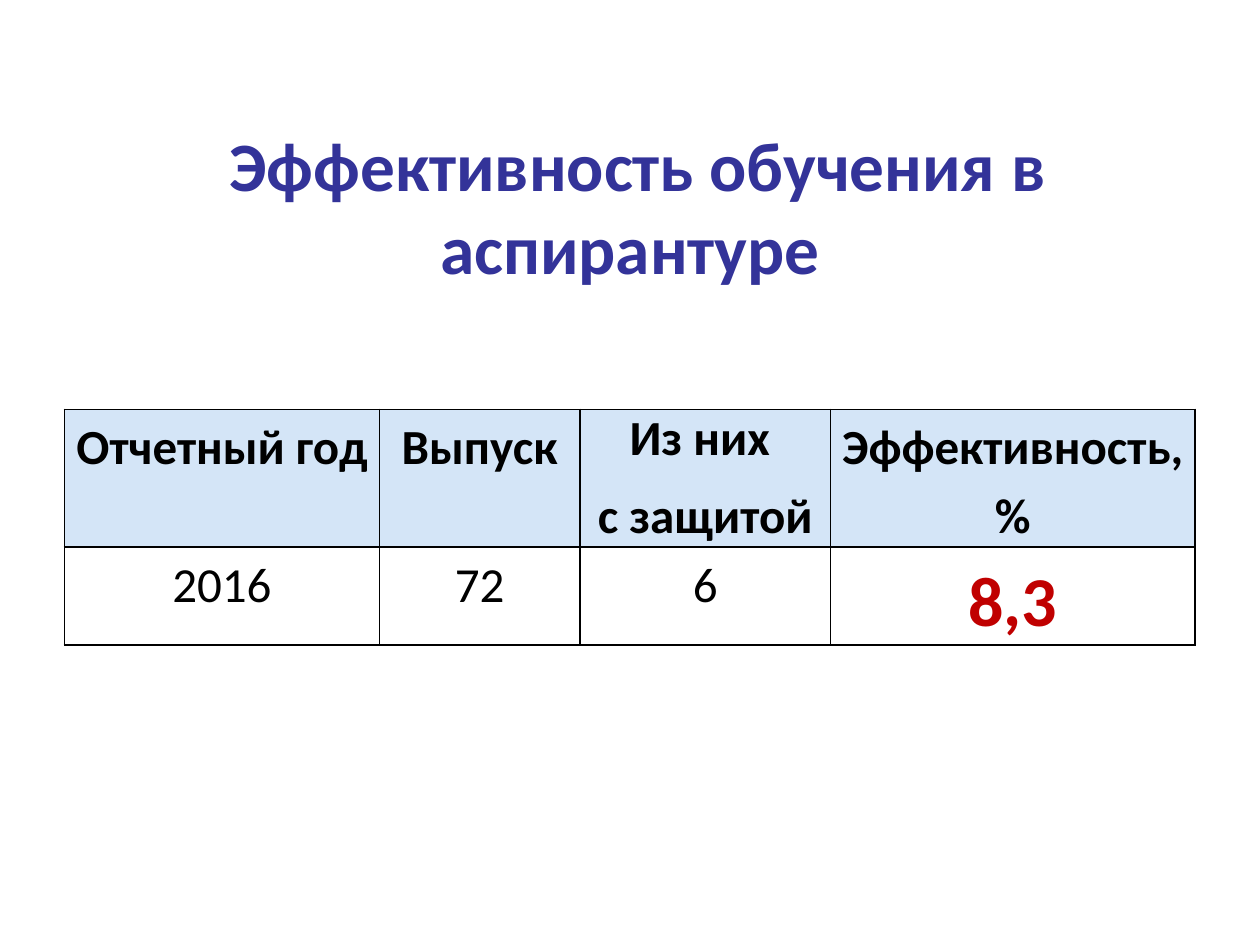
import dataclasses

import lxml.etree
import pptx
import pptx.dml.color
import pptx.enum.text
import pptx.oxml.ns
import pptx.util

Cm = pptx.util.Cm
Pt = pptx.util.Pt


@dataclasses.dataclass
class Theme:
    font: str = "Calibri"
    title_color: str = "333399"
    text_color: str = "000000"
    accent_color: str = "C00000"
    header_fill: str = "D4E5F7"
    border_color: str = "000000"
    title_size: float = 39.6
    cell_size: float = 28
    accent_size: float = 40


class SlideBuilder:
    def __init__(self, slide, theme):
        self.slide = slide
        self.theme = theme

    def format_paragraph(self, paragraph, size, color, bold):
        paragraph.alignment = pptx.enum.text.PP_ALIGN.CENTER
        for run in paragraph.runs:
            run.font.name = self.theme.font
            run.font.size = Pt(size)
            run.font.bold = bold
            run.font.color.rgb = pptx.dml.color.RGBColor.from_string(color)

    def add_title(self, text, left, top, width, height):
        title = self.slide.shapes.title
        title.left, title.top, title.width, title.height = map(Cm, (left, top, width, height))
        title.text_frame.text = text
        title.text_frame.vertical_anchor = pptx.enum.text.MSO_ANCHOR.MIDDLE
        self.format_paragraph(title.text_frame.paragraphs[0], self.theme.title_size,
                              self.theme.title_color, True)

    def add_table(self, rows, left, top, column_widths, row_heights):
        frame = self.slide.shapes.add_table(
            len(rows), len(column_widths), Cm(left), Cm(top),
            Cm(sum(column_widths)), Cm(sum(row_heights)))
        table = frame.table
        table.horz_banding = False
        table.first_row = False
        for column, width in zip(table.columns, column_widths):
            column.width = Cm(width)
        for row, height in zip(table.rows, row_heights):
            row.height = Cm(height)
        for row_index, texts in enumerate(rows):
            for column_index, text in enumerate(texts):
                self.fill_cell(table.cell(row_index, column_index), text, row_index == 0)
        return table

    def fill_cell(self, cell, text, is_header):
        cell.margin_left = cell.margin_right = Cm(0.18)
        cell.margin_top = cell.margin_bottom = 0
        self.add_borders(cell)
        if is_header:
            cell.fill.solid()
            cell.fill.fore_color.rgb = pptx.dml.color.RGBColor.from_string(self.theme.header_fill)
        else:
            cell.fill.background()
        cell.text_frame.text = text
        paragraphs = cell.text_frame.paragraphs
        for paragraph in paragraphs:
            self.format_paragraph(paragraph, self.theme.cell_size, self.theme.text_color, is_header)
            paragraph.space_after = Pt(10 if is_header else 0)
            if len(paragraphs) == 1:
                paragraph.line_spacing = 1.15

    def add_borders(self, cell):
        properties = cell._tc.get_or_add_tcPr()
        qn = pptx.oxml.ns.qn
        for side in ("a:lnL", "a:lnR", "a:lnT", "a:lnB"):
            line = lxml.etree.SubElement(properties, qn(side), w=str(Pt(1)))
            fill = lxml.etree.SubElement(line, qn("a:solidFill"))
            lxml.etree.SubElement(fill, qn("a:srgbClr"), val=self.theme.border_color)

    def emphasize(self, cell):
        self.format_paragraph(cell.text_frame.paragraphs[0], self.theme.accent_size,
                              self.theme.accent_color, True)


def main():
    presentation = pptx.Presentation()
    presentation.slide_width = Cm(25.4)
    presentation.slide_height = Cm(19.05)
    slide = presentation.slides.add_slide(presentation.slide_layouts[5])
    builder = SlideBuilder(slide, Theme())

    # Title
    builder.add_title(" Эффективность обучения в аспирантуре", 1.27, 2.54, 22.86, 3.18)

    # Results table, with the efficiency value standing out
    table = builder.add_table(
        [["Отчетный год", "Выпуск", "Из них \nс защитой", "Эффективность, %"],
         ["2016", "72", "6", "8,3"]],
        left=1.3, top=8.25,
        column_widths=[6.35, 4.04, 5.05, 7.35], row_heights=[2.72, 1.83])
    builder.emphasize(table.cell(1, 3))

    presentation.save("out.pptx")


if __name__ == "__main__":
    main()
